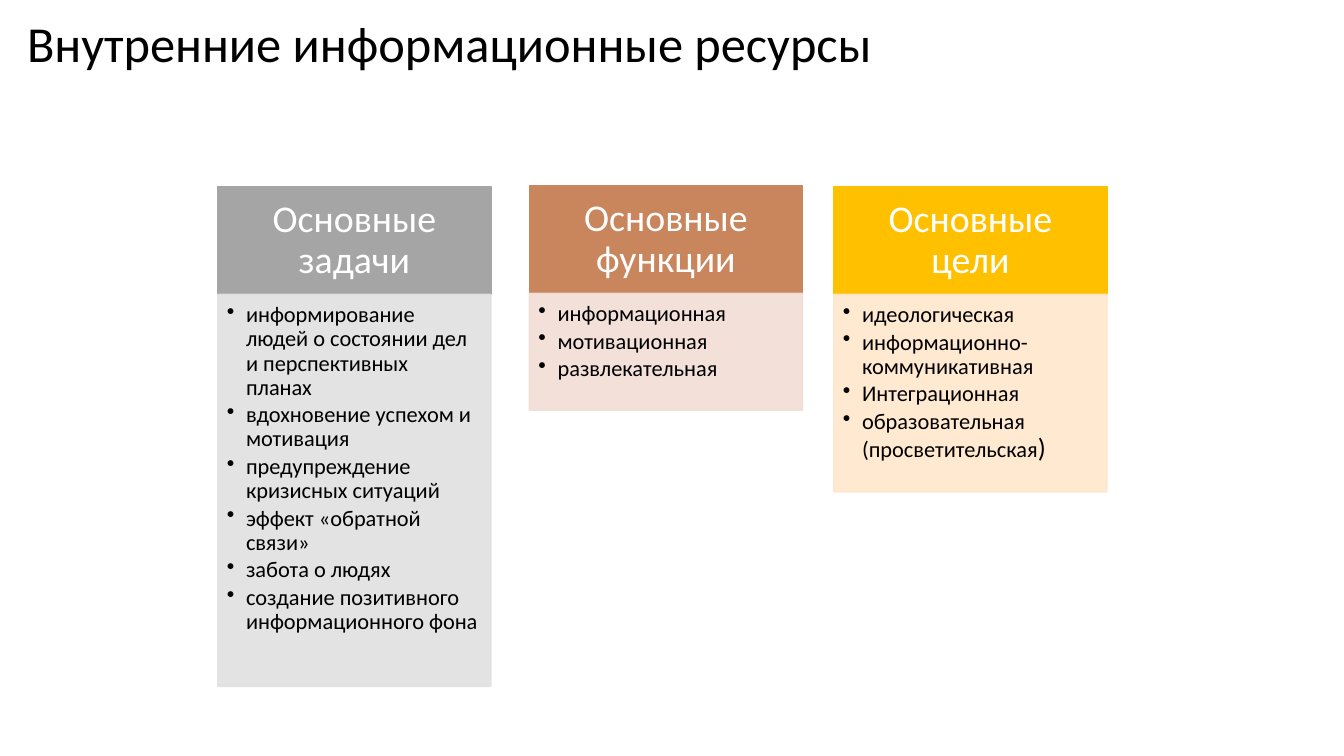
import pptx
import pptx.dml.color
import pptx.enum.shapes
import pptx.enum.text
import pptx.oxml
import pptx.oxml.ns
import pptx.util
from pptx.util import Inches

FONT = "Calibri"
COLORS = {
    "black": "000000",
    "white": "FFFFFF",
    "gray": "A5A5A5",
    "pale gray": "E1E1E1",
    "copper": "C9855C",
    "pale copper": "F1DDD5",
    "gold": "FFC000",
    "pale gold": "FFE7CB",
}
COLUMN_WIDTH = 2.71
HEADER_HEIGHT = 1.07
BULLET_INDENT = 0.19

# Left, top, heading, colour, body height, items
COLUMNS = [
    (2.16, 1.85, "Основные задачи", "gray", 3.89, [
        "информирование людей о состоянии дел и перспективных планах",
        "вдохновение успехом и мотивация",
        "предупреждение кризисных ситуаций",
        "эффект «обратной связи»",
        "забота о людях",
        "создание позитивного информационного фона",
    ]),
    (5.25, 1.84, "Основные функции", "copper", 1.16, [
        "информационная",
        "мотивационная",
        "развлекательная",
    ]),
    (8.27, 1.85, "Основные цели", "gold", 1.96, [
        "идеологическая",
        "информационно-коммуникативная",
        "Интеграционная",
        "образовательная (просветительская",
    ]),
]


def add_panel(left, top, height, color, margins, opacity=100):
    """Add a column-wide rectangle; margins run left, top, right, bottom."""
    shape = slide.shapes.add_shape(
        pptx.enum.shapes.MSO_SHAPE.RECTANGLE,
        Inches(left), Inches(top), Inches(COLUMN_WIDTH), Inches(height))
    shape.shadow.inherit = False
    shape.line.width = pptx.util.Pt(1)
    for fill in (shape.fill, shape.line.fill):
        fill.solid()
        fill.fore_color.rgb = pptx.dml.color.RGBColor.from_string(COLORS[color])
    if opacity < 100:
        for element in shape._element.spPr.iter(pptx.oxml.ns.qn("a:srgbClr")):
            element.append(pptx.oxml.parse_xml(
                f'<a:alpha {pptx.oxml.ns.nsdecls("a")} val="{opacity * 1000}"/>'))
    frame = shape.text_frame
    frame.word_wrap = True
    (frame.margin_left, frame.margin_top,
     frame.margin_right, frame.margin_bottom) = map(Inches, margins)
    return frame


def format_paragraph(paragraph, size, color, alignment, space_after=0):
    paragraph.alignment = alignment
    paragraph.line_spacing = 0.9
    paragraph.space_after = pptx.util.Pt(space_after)
    paragraph.font.name = FONT
    paragraph.font.size = pptx.util.Pt(size)
    paragraph.font.color.rgb = pptx.dml.color.RGBColor.from_string(COLORS[color])


ALIGN = pptx.enum.text.PP_ALIGN
ANCHOR = pptx.enum.text.MSO_ANCHOR

presentation = pptx.Presentation()
presentation.slide_width = Inches(13.33)
presentation.slide_height = Inches(7.5)
slide = presentation.slides.add_slide(presentation.slide_layouts[6])

title = slide.shapes.add_textbox(
    Inches(0.17), Inches(-0.27), Inches(11.5), Inches(1.45)).text_frame
title.word_wrap = True
title.vertical_anchor = ANCHOR.MIDDLE
title.text = "Внутренние информационные ресурсы"
format_paragraph(title.paragraphs[0], 36, "black", ALIGN.LEFT)

for left, top, heading, color, body_height, items in COLUMNS:
    header = add_panel(left, top, HEADER_HEIGHT, color, (0.21, 0.12, 0.21, 0.12))
    header.vertical_anchor = ANCHOR.MIDDLE
    header.text = heading
    format_paragraph(header.paragraphs[0], 27, "white", ALIGN.CENTER)

    body = add_panel(left, top + HEADER_HEIGHT, body_height, "pale " + color,
                     (0.09, 0.09, 0.12, 0.14), opacity=90)
    body.vertical_anchor = ANCHOR.TOP
    body.text = "\n".join(items)
    for paragraph in body.paragraphs:
        properties = paragraph._p.get_or_add_pPr()
        properties.set("marL", str(Inches(BULLET_INDENT)))
        properties.set("indent", str(-Inches(BULLET_INDENT)))
        properties.append(pptx.oxml.parse_xml(
            f'<a:buChar {pptx.oxml.ns.nsdecls("a")} char="•"/>'))
        format_paragraph(paragraph, 16, "black", ALIGN.LEFT, space_after=2.4)

# The closing bracket of the last goal is larger than its line
bracket = body.paragraphs[-1].add_run()
bracket.text = ")"
bracket.font.size = pptx.util.Pt(19)

presentation.save("out.pptx")
